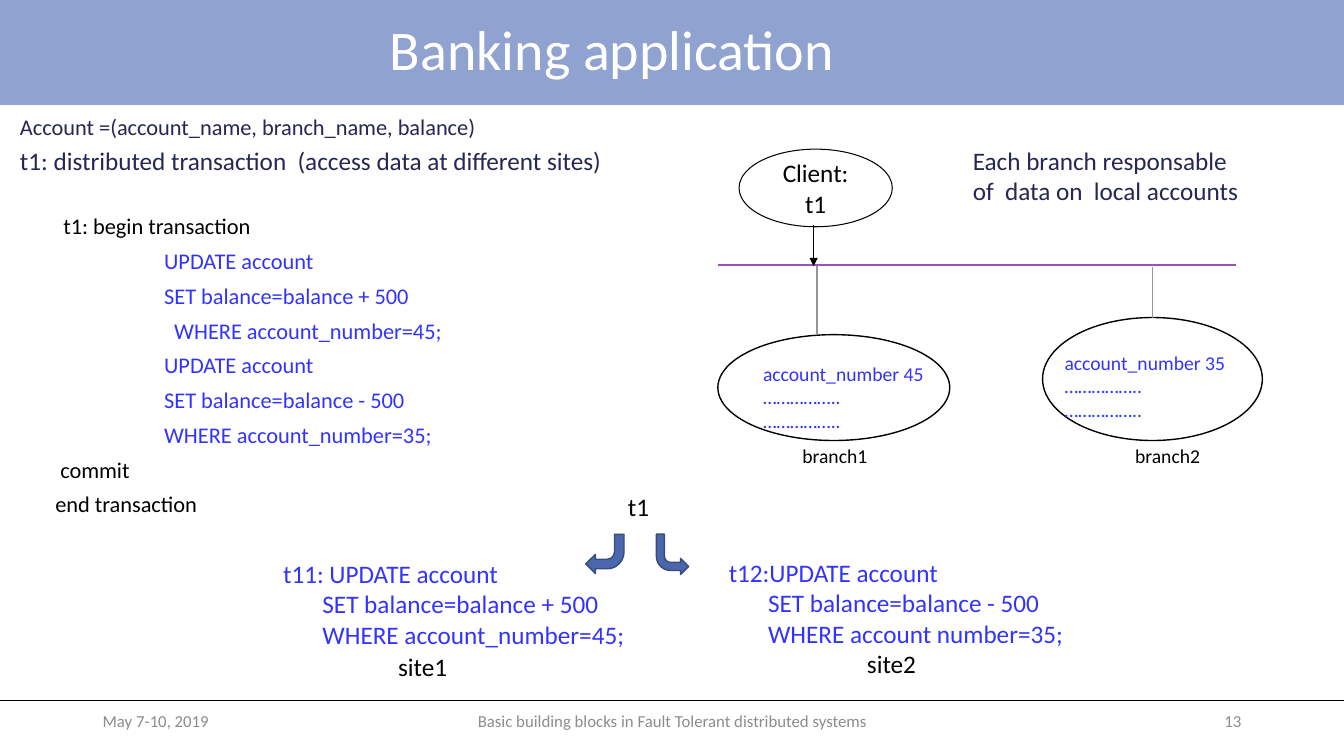
"""Build the banking application slide on distributed transactions."""
from pptx import Presentation
from pptx.dml.color import RGBColor
from pptx.enum.shapes import MSO_CONNECTOR, MSO_SHAPE as SHAPE
from pptx.enum.text import MSO_ANCHOR as ANCHOR, PP_ALIGN as ALIGN
from pptx.oxml.ns import qn
from pptx.util import Pt
from lxml import etree

PX = 9144
COLORS = {
    "header": "90A2CF", "white": "FFFFFF", "black": "000000", "footer": "8C8C8C",
    "navy": "242852", "code": "3333FF", "link": "969696", "bus": "9454C3",
    "arrow": "4A66AC", "edge": "374B7F",
}


def color(name):
    return RGBColor.from_string(COLORS[name])


def write(tf, lines, size, ink, align=ALIGN.LEFT, anchor=ANCHOR.TOP, wrap=True,
          before=0, spacing=1.0):
    """Write (text, indent, colour) lines; plain strings take the defaults."""
    tf.word_wrap, tf.vertical_anchor = wrap, anchor
    for i, line in enumerate(lines):
        text, indent, tint = (line, 0, ink) if isinstance(line, str) else line
        p = tf.paragraphs[0] if i == 0 else tf.add_paragraph()
        p.text, p.alignment, p.line_spacing = text, align, spacing
        p.space_before = Pt(before if i else 0)
        if indent:
            p._p.get_or_add_pPr().set("marL", str(indent * PX))
        for r in p.runs:
            for key, value in {"name": "Calibri", "size": Pt(size)}.items():
                setattr(r.font, key, value)
            r.font.color.rgb = color(tint)


prs = Presentation()
prs.slide_width, prs.slide_height = 1333 * PX, 750 * PX
s = prs.slides.add_slide(prs.slide_layouts[6])

shapes = {}
for name, kind, box, fill, edge, width, flips in [
    ("header", SHAPE.RECTANGLE, (0, 0, 1333, 104), "header", None, 0, ()),
    ("branch1", SHAPE.OVAL, (712, 332, 230, 105), None, "black", 1, ()),
    ("branch2", SHAPE.OVAL, (1034, 315, 218, 122), None, "black", 1, ()),
    ("client", SHAPE.OVAL, (733, 148, 152, 77), "white", "black", 0.75, ()),
    ("to site2", SHAPE.BENT_ARROW, (651, 530, 32, 40), "arrow", "edge", 1, ("flipV",)),
    ("to site1", SHAPE.BENT_ARROW, (581, 530, 38, 39), "arrow", "edge", 1, ("flipH", "flipV")),
]:
    sp = s.shapes.add_shape(kind, *[v * PX for v in box])
    sp.shadow.inherit = False
    if fill:
        sp.fill.solid()
        sp.fill.fore_color.rgb = color(fill)
    else:
        sp.fill.background()
    if edge:
        sp.line.color.rgb = color(edge)
        sp.line.width = Pt(width)
    else:
        sp.line.fill.background()
    for flip in flips:
        sp._element.spPr.find(qn("a:xfrm")).set(flip, "1")
    shapes[name] = sp

write(shapes["client"].text_frame, ["Client:\nt1"], 18, "black",
      ALIGN.CENTER, ANCHOR.MIDDLE, False)

lines = {}
for name, ends, ink, width in [
    ("footer rule", (0, 695, 1333, 695), "black", 0.5),
    ("branch1 link", (810, 264, 810, 331), "link", 1.25),
    ("branch2 link", (1143, 265, 1143, 315), "link", 1.25),
    ("bus", (712, 263, 1226, 263), "bus", 1),
    ("client link", (807, 223, 807, 264), "black", 0.75),
]:
    ln = s.shapes.add_connector(MSO_CONNECTOR.STRAIGHT, *[v * PX for v in ends])
    ln.line.color.rgb = color(ink)
    ln.line.width = Pt(width)
    etree.SubElement(ln._element.spPr, qn("a:effectLst"))
    lines[name] = ln
lines["branch2 link"].end_connect(shapes["branch2"], 0)
etree.SubElement(lines["client link"].line._get_or_add_ln(), qn("a:tailEnd"), type="triangle")

MIDDLE = {"anchor": ANCHOR.MIDDLE}
CENTER = {**MIDDLE, "align": ALIGN.CENTER}
RIGHT = {**MIDDLE, "align": ALIGN.RIGHT}
NO_WRAP = {"wrap": False}
DOTS = ["……………..", "…………….."]

transaction = [
    ("t1: begin transaction", 38, "black"),
    *[(text, 138, "code") for text in (
        "UPDATE account", "SET balance=balance + 500", "  WHERE account_number=45;",
        "UPDATE account", "SET balance=balance - 500", "WHERE account_number=35;")],
    ("commit", 35, "black"),
    ("end transaction", 30, "black"),
]

for box, size, ink, text, style in [
    ((0, 1, 1214, 102), 40, "white", ["Banking application"], {**CENTER, "spacing": 0.9}),
    ((92, 695, 300, 40), 12, "footer", ["May 7-10, 2019"], MIDDLE),
    ((442, 695, 450, 40), 12, "footer",
     ["Basic building blocks in Fault Tolerant distributed systems"], CENTER),
    ((941, 695, 300, 40), 12, "footer", ["13"], RIGHT),
    ((10, 107, 477, 37), 16, "navy", ["Account =(account_name, branch_name, balance)"], NO_WRAP),
    ((10, 139, 604, 40), 18, "navy",
     ["t1: distributed transaction  (access data at different sites)"], NO_WRAP),
    ((955, 139, 287, 71), 18, "navy",
     ["Each branch responsable\nof  data on  local accounts"], NO_WRAP),
    ((15, 206, 560, 320), 16, "black", transaction, {"before": 5.6}),
    ((747, 354, 194, 81), 14, "code", ["account_number 45", *DOTS], {}),
    ((1046, 343, 204, 81), 14, "code", ["account_number 35", *DOTS], {}),
    ((786, 436, 137, 33), 14, "black", ["branch1"], {}),
    ((1116, 436, 110, 33), 14, "black", ["branch2"], {}),
    ((613, 483, 42, 40), 18, "black", ["t1"], NO_WRAP),
    ((271, 549, 417, 101), 18, "code",
     ["t11: UPDATE account", ("SET balance=balance + 500", 39, "code"),
      ("WHERE account_number=45;", 39, "code")], {}),
    ((713, 548, 410, 101), 18, "code",
     ["t12:UPDATE account", ("SET balance=balance - 500", 39, "code"),
      ("WHERE account number=35;", 39, "code")], {}),
    ((385, 641, 137, 40), 18, "black", ["site1"], {}),
    ((850, 638, 110, 40), 18, "black", ["site2"], {}),
]:
    tb = s.shapes.add_textbox(*[v * PX for v in box])
    write(tb.text_frame, text, size, ink, **style)

prs.save("out.pptx")
